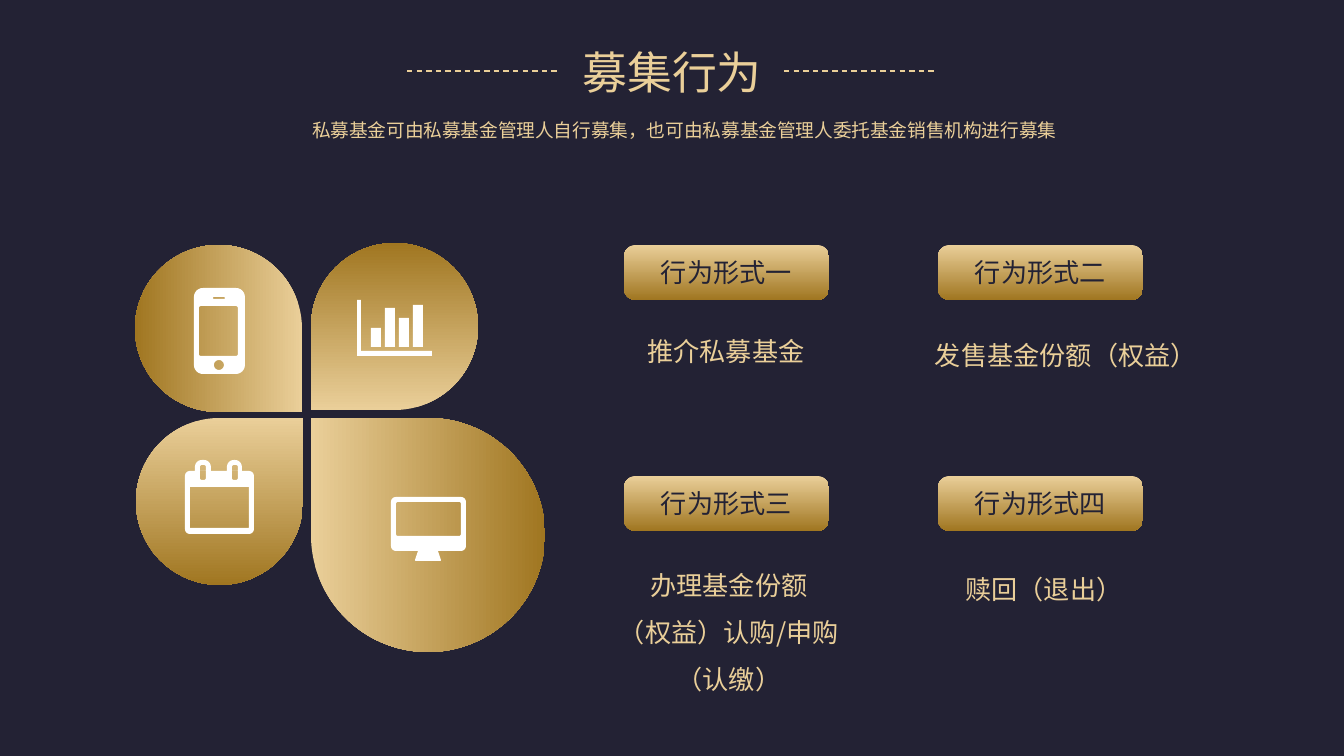
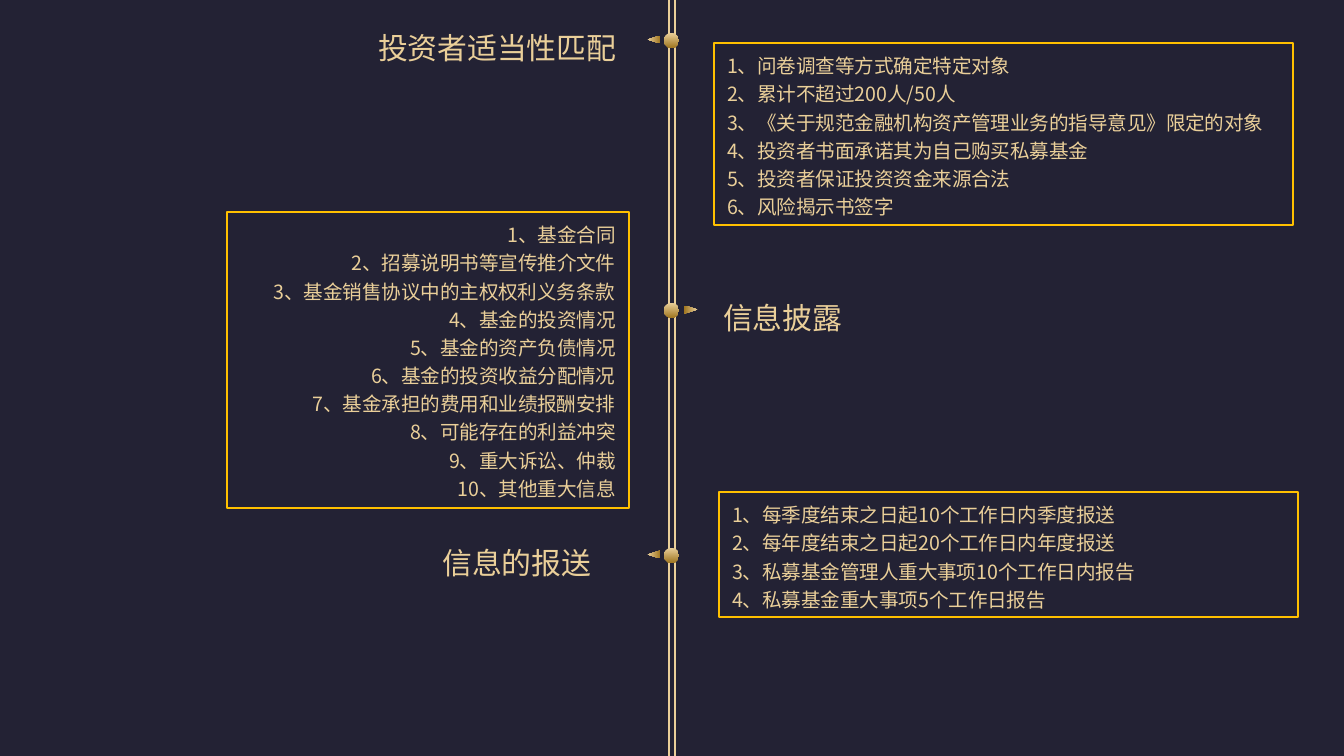
import math

import lxml.etree
import pptx
import pptx.dml.color
import pptx.enum.dml
import pptx.enum.shapes
import pptx.enum.text
import pptx.oxml.ns
import pptx.util

COLORS = {"night": "232234", "gold": "EACF99", "bronze": "A07621", "amber": "FFC000", "white": "FFFFFF"}
FONT = "Noto Sans CJK SC"
PX = 914400 * 10 / 1344
RGB = pptx.dml.color.RGBColor.from_string
SHAPE = pptx.enum.shapes.MSO_SHAPE
STRAIGHT = pptx.enum.shapes.MSO_CONNECTOR.STRAIGHT
ALIGN = pptx.enum.text.PP_ALIGN
ANCHOR = pptx.enum.text.MSO_ANCHOR
qn = pptx.oxml.ns.qn


def gild(fill):
    fill.gradient()
    fill.gradient_angle = 270
    for stop, tone, position in zip(fill.gradient_stops, ("gold", "bronze"), (0, 1)):
        stop.color.rgb = RGB(COLORS[tone])
        stop.position = position


def write(frame, text, size=14, color=None, align=ALIGN.LEFT, spacing=None,
          anchor=ANCHOR.TOP, insets=None, grow=True):
    frame.word_wrap = True
    frame.vertical_anchor = anchor
    if grow:
        frame.auto_size = pptx.enum.text.MSO_AUTO_SIZE.SHAPE_TO_FIT_TEXT
    if insets is not None:
        frame.margin_left = frame.margin_right = round(insets[0] * PX)
        frame.margin_top = frame.margin_bottom = round(insets[1] * PX)
    for index, line in enumerate(text.split("\n")):
        paragraph = frame.add_paragraph() if index else frame.paragraphs[0]
        paragraph.alignment = align
        paragraph.line_spacing = spacing
        run = paragraph.add_run()
        run.text = line
        run.font.size = pptx.util.Pt(size)
        if color:
            run.font.color.rgb = RGB(COLORS[color])
        else:
            gild(run.font.fill)
        run.font.name = FONT
        lxml.etree.SubElement(run._r.get_or_add_rPr(), qn("a:ea"), typeface=FONT)


deck = pptx.Presentation()
deck.slide_width = round(1344 * PX)
deck.slide_height = round(756 * PX)
behaviour, duties = [deck.slides.add_slide(deck.slide_layouts[6]) for _ in range(2)]
for slide in (behaviour, duties):
    slide.background.fill.solid()
    slide.background.fill.fore_color.rgb = RGB(COLORS["night"])

golden = []
rules = []

# each icon part: left, top, right, bottom, top radius, bottom radius, flare
calendar = [
    (185, 471, 254, 534, 5, 5, 0), (190, 487, 249, 528, 0, 0, 0),
    (195, 460, 211, 471, 7, 0, 0), (200, 465, 206, 480, 2, 2, 0),
    (227, 460, 242, 471, 7, 0, 0), (232, 465, 238, 480, 2, 2, 0),
]
monitor = [
    (391, 497, 466, 551, 5, 5, 0), (396, 502, 461, 536, 2, 2, 0),
    (418, 551, 438, 561, 0, 1, 3),
]
bar_chart = [(357, 300, 361, 351, 0, 0, 0), (357, 351, 432, 356, 0, 0, 0)]
bar_chart += [(371 + 14 * i, top, 381 + 14 * i, 347, 0, 0, 0) for i, top in enumerate((328, 308, 318, 305))]
phone = [
    (194, 288, 245, 374, 9, 9, 0), (199, 306, 238, 356, 2, 2, 0),
    (213, 297, 225, 299, 1, 1, 0), (214, 360, 224, 370, 5, 5, 0),
]
petals = [
    (136, 418, 167, 0, calendar),
    (311, 418, 234, 270, monitor),
    (311, 243, 167, 180, bar_chart),
    (135, 245, 167, 90, phone),
]
for left, top, side, turn, icon in petals:
    group = behaviour.shapes.add_group_shape().shapes
    petal = group.add_shape(SHAPE.TEAR, *[round(v * PX) for v in (left, top, side, side)])
    petal.rotation = turn
    golden.append(petal)
    outline = None
    for x1, y1, x2, y2, upper, lower, flare in icon:
        corners = [
            (x1 + upper, y1 + upper, upper, 180),
            (x2 - upper, y1 + upper, upper, 270),
            (x2 - lower + flare, y2 - lower, lower, 0),
            (x1 + lower - flare, y2 - lower, lower, 90),
        ]
        points = []
        for cx, cy, radius, start in corners:
            for step in range(7 if radius else 1):
                angle = math.radians(start + 15 * step)
                points.append(((cx + radius * math.cos(angle)) * PX, (cy + radius * math.sin(angle)) * PX))
        if outline is None:
            outline = group.build_freeform(*points[0], scale=1.0)
        else:
            outline.move_to(*points[0])
        outline.add_line_segments(points[1:], close=True)
    symbol = outline.convert_to_shape()
    symbol.shadow.inherit = False
    symbol.fill.solid()
    symbol.fill.fore_color.rgb = RGB(COLORS["white"])
    symbol.line.fill.background()

for index, numeral in enumerate("一二三四"):
    row, column = divmod(index, 2)
    box = (624 + 314 * column, 245 + 231 * row, 205, 55)
    badge = behaviour.shapes.add_shape(SHAPE.ROUNDED_RECTANGLE, *[round(v * PX) for v in box])
    badge.adjustments[0] = 0.21
    write(badge.text_frame, "行为形式" + numeral, color="night", align=ALIGN.CENTER,
          anchor=ANCHOR.MIDDLE, insets=(0, 0), grow=False)
    golden.append(badge)

form = dict(align=ALIGN.CENTER, spacing=1.5, insets=(7, 4))
title = dict(size=24, align=ALIGN.CENTER)
subtitle = dict(size=10, align=ALIGN.CENTER, spacing=1.2, grow=False)
heading = dict(size=16)
captions = [
    (behaviour, (607, 316, 238, 48), "推介私募基金", form),
    (behaviour, (922, 320, 288, 48), "发售基金份额（权益）", form),
    (behaviour, (610, 550, 238, 144), "办理基金份额\n（权益）认购/申购（认缴）", form),
    (behaviour, (925, 554, 238, 48), "赎回（退出）", form),
    (behaviour, (568, 38, 208, 68), "募集行为", title),
    (behaviour, (38, 108, 1292, 63), "私募基金可由私募基金管理人自行募集，也可由私募基金管理人委托基金销售机构进行募集", subtitle),
    (duties, (365, 23, 277, 50), "投资者适当性匹配", heading),
    (duties, (710, 293, 184, 50), "信息披露", heading),
    (duties, (429, 538, 208, 50), "信息的报送", heading),
]
for slide, box, text, style in captions:
    caption = slide.shapes.add_textbox(*[round(v * PX) for v in box])
    write(caption.text_frame, text, **style)

for left in (784, 407):
    dash = behaviour.shapes.add_connector(STRAIGHT, *[round(v * PX) for v in (left, 71, left + 153, 71)])
    dash.line.dash_style = pptx.enum.dml.MSO_LINE.DASH
    rules.append(dash)

timeline = duties.shapes.add_group_shape().shapes
for x in (675, 669):
    rules.append(timeline.add_connector(STRAIGHT, *[round(v * PX) for v in (x, 0, x, 756)]))
for top, pointer_left, turn in ((33, 650, 270), (303, 687, 90), (548, 650, 270)):
    dot = timeline.add_shape(SHAPE.OVAL, *[round(v * PX) for v in (664, top, 15, 15)])
    pointer = duties.shapes.add_shape(SHAPE.ISOSCELES_TRIANGLE, *[round(v * PX) for v in (pointer_left, top, 8, 13)])
    pointer.rotation = turn
    golden += [dot, pointer]

requirements = [
    ((714, 43, 579, 182), ALIGN.LEFT, [
        "问卷调查等方式确定特定对象",
        "累计不超过200人/50人",
        "《关于规范金融机构资产管理业务的指导意见》限定的对象",
        "投资者书面承诺其为自己购买私募基金",
        "投资者保证投资资金来源合法",
        "风险揭示书签字",
    ]),
    ((227, 212, 402, 296), ALIGN.RIGHT, [
        "基金合同",
        "招募说明书等宣传推介文件",
        "基金销售协议中的主权权利义务条款",
        "基金的投资情况",
        "基金的资产负债情况",
        "基金的投资收益分配情况",
        "基金承担的费用和业绩报酬安排",
        "可能存在的利益冲突",
        "重大诉讼、仲裁",
        "其他重大信息",
    ]),
    ((719, 492, 579, 125), ALIGN.LEFT, [
        "每季度结束之日起10个工作日内季度报送",
        "每年度结束之日起20个工作日内年度报送",
        "私募基金管理人重大事项10个工作日内报告",
        "私募基金重大事项5个工作日报告",
    ]),
]
for box, align, items in requirements:
    panel = duties.shapes.add_shape(SHAPE.RECTANGLE, *[round(v * PX) for v in box])
    panel.shadow.inherit = False
    panel.fill.background()
    panel.line.color.rgb = RGB(COLORS["amber"])
    panel.line.width = pptx.util.Pt(0.75)
    numbered = "\n".join(f"{number}、{item}" for number, item in enumerate(items, 1))
    write(panel.text_frame, numbered, size=10.5, align=align, spacing=1.2)

for ornament in golden:
    ornament.shadow.inherit = False
    ornament.line.fill.background()
    gild(ornament.fill)

for rule in rules:
    rule.line.color.rgb = RGB(COLORS["gold"])
    rule.line.width = pptx.util.Pt(0.75)
    lxml.etree.SubElement(rule._element.spPr, qn("a:effectLst"))

deck.save("out.pptx")
